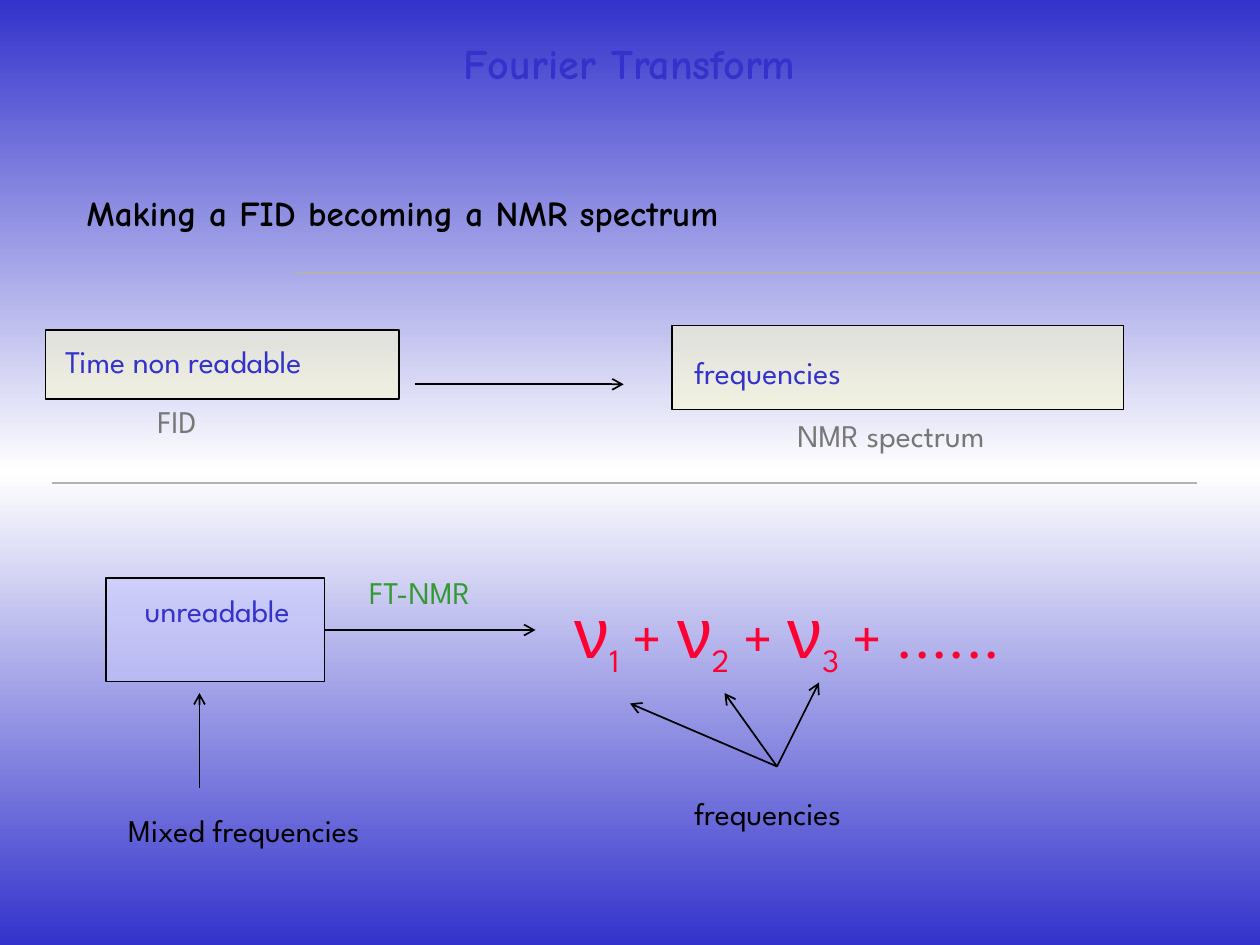
from copy import deepcopy

from pptx import Presentation
from pptx.dml.color import RGBColor as Color
from pptx.enum.shapes import MSO_CONNECTOR as Connector, MSO_SHAPE as Shape
from pptx.enum.text import MSO_AUTO_SIZE as Fit, MSO_ANCHOR as Anchor, PP_ALIGN as Align
from pptx.oxml.ns import qn
from pptx.oxml.xmlchemy import OxmlElement as Element
from pptx.util import Pt

THEME = {
    "blue": "3333CC", "white": "FFFFFF", "cream": "FFFFCC", "lilac": "CCCCFF",
    "black": "000000", "gray": "777777", "rule": "B2B2B2", "green": "339933", "red": "FF0033",
    "title": {"name": "Comic Neue", "size": Pt(24), "bold": True},
    "heading": {"name": "Comic Neue", "size": Pt(20), "bold": True},
    "label": {"name": "League Spartan", "size": Pt(18)},
    "greek": {"name": "Arial", "size": Pt(40)},
    "term": {"name": "League Spartan", "size": Pt(32)},
}
BACKGROUND = ["blue", "white", "blue"]
PANELS = [
    ((384, 186, 258, 48), "cream"),
    ((26, 188.5, 202, 39.5), "cream"),
    ((60.5, 330.5, 125, 59), "lilac"),
]
HEADINGS = [
    ("Fourier Transform", (98, 18, 523.5, 50.5), "title", "blue", Align.CENTER),
    ("Making a FID becoming a NMR spectrum", (42.5, 106, 637, 31), "heading", "black", Align.LEFT),
]
LABELS = [
    ("Time non readable", (30.2, 192.2, 164), "blue"),
    ("frequencies", (389.5, 198, 107.3), "blue"),
    ("FID", (82.8, 226.1, 44), "gray"),
    ("NMR spectrum", (448.6, 234, 134.6), "gray"),
    ("unreadable", (75.6, 334.1, 104.4), "blue"),
    ("FT-NMR", (203.8, 324, 83.5), "green"),
    ("frequencies", (389.5, 450, 107.3), "black"),
    ("Mixed frequencies", (66.2, 460.1, 160.6), "black"),
]
LABEL_HEIGHT = 28.8
FORMULA_AREA = (321.1, 332.6, 270.7, 59)
FORMULA_TERMS = [("1", " + "), ("2", " + "), ("3", " + ......")]
RULES = [((30, 276), (684, 276)), ((168, 156), (720, 156))]
FAN = (444, 438)
ARROWS = [
    ((237, 219.6), (356.4, 219.6)),
    ((186, 360), (306, 360)),
    ((114, 450), (114, 396)),
    (FAN, (360, 402)),
    (FAN, (414, 396)),
    (FAN, (468, 390)),
]


def color(name):
    """Return a theme colour."""
    return Color.from_string(THEME[name])


def points(values):
    """Turn plain numbers into lengths."""
    return [Pt(value) for value in values]


def apply(target, values):
    """Set each attribute of the target from a dict."""
    for name, value in values.items():
        setattr(target, name, value)


def paint_background(page):
    """Fill the page with a vertical gradient."""
    fill = page.background.fill
    fill.gradient()
    fill.gradient_angle = 270
    stops = page.element.find(".//" + qn("a:gsLst"))
    stops.insert(1, deepcopy(stops[0]))
    for index, (stop, name) in enumerate(zip(fill.gradient_stops, BACKGROUND)):
        stop.position = index / (len(BACKGROUND) - 1)
        stop.color.rgb = color(name)


def add_panel(page, area, name):
    """Add a half-transparent outlined rectangle."""
    panel = page.shapes.add_shape(Shape.RECTANGLE, *points(area))
    panel.shadow.inherit = False
    panel.fill.solid()
    panel.fill.fore_color.rgb = color(name)
    alpha = Element("a:alpha")
    alpha.set("val", "50000")
    panel.element.spPr.find(".//" + qn("a:srgbClr")).append(alpha)
    panel.line.color.rgb = color("black")
    panel.line.width = Pt(1)


def add_text(page, area, spans, align=Align.LEFT, wrap=False):
    """Add a text box made of (text, style, colour, subscript) spans."""
    box = page.shapes.add_textbox(*points(area))
    apply(box.text_frame, {
        "word_wrap": wrap,
        "auto_size": Fit.NONE if wrap else Fit.SHAPE_TO_FIT_TEXT,
        "vertical_anchor": Anchor.TOP,
    })
    para = box.text_frame.paragraphs[0]
    para.alignment = align
    for text, style, name, subscript in spans:
        span = para.add_run()
        span.text = text
        apply(span.font, THEME[style])
        span.font.color.rgb = color(name)
        if subscript:
            span.font._element.set("baseline", "-25000")


def add_line(page, start, end, name, arrow=False):
    """Add a straight line, with an arrowhead at its end if asked."""
    line = page.shapes.add_connector(Connector.STRAIGHT, *points(start + end))
    line.line.color.rgb = color(name)
    line.line.width = Pt(1)
    if arrow:
        head = Element("a:tailEnd")
        head.set("type", "arrow")
        line.line._get_or_add_ln().append(head)
    line.element.spPr.append(Element("a:effectLst"))


def main():
    """Build the slide and save it."""
    deck = Presentation()
    apply(deck, {"slide_width": Pt(720), "slide_height": Pt(540)})
    page = deck.slides.add_slide(deck.slide_layouts[6])
    paint_background(page)
    for area, name in PANELS:
        add_panel(page, area, name)
    for start, end in RULES:
        add_line(page, start, end, "rule")
    for start, end in ARROWS:
        add_line(page, start, end, "black", arrow=True)
    for text, area, style, name, align in HEADINGS:
        add_text(page, area, [(text, style, name, False)], align, wrap=True)
    for text, place, name in LABELS:
        add_text(page, (*place, LABEL_HEIGHT), [(text, "label", name, False)])
    formula = []
    for index, joiner in FORMULA_TERMS:
        formula += [
            ("ν", "greek", "red", False),
            (index, "term", "red", True),
            (joiner, "term", "red", False),
        ]
    add_text(page, FORMULA_AREA, formula)
    deck.save("out.pptx")


if __name__ == "__main__":
    main()
